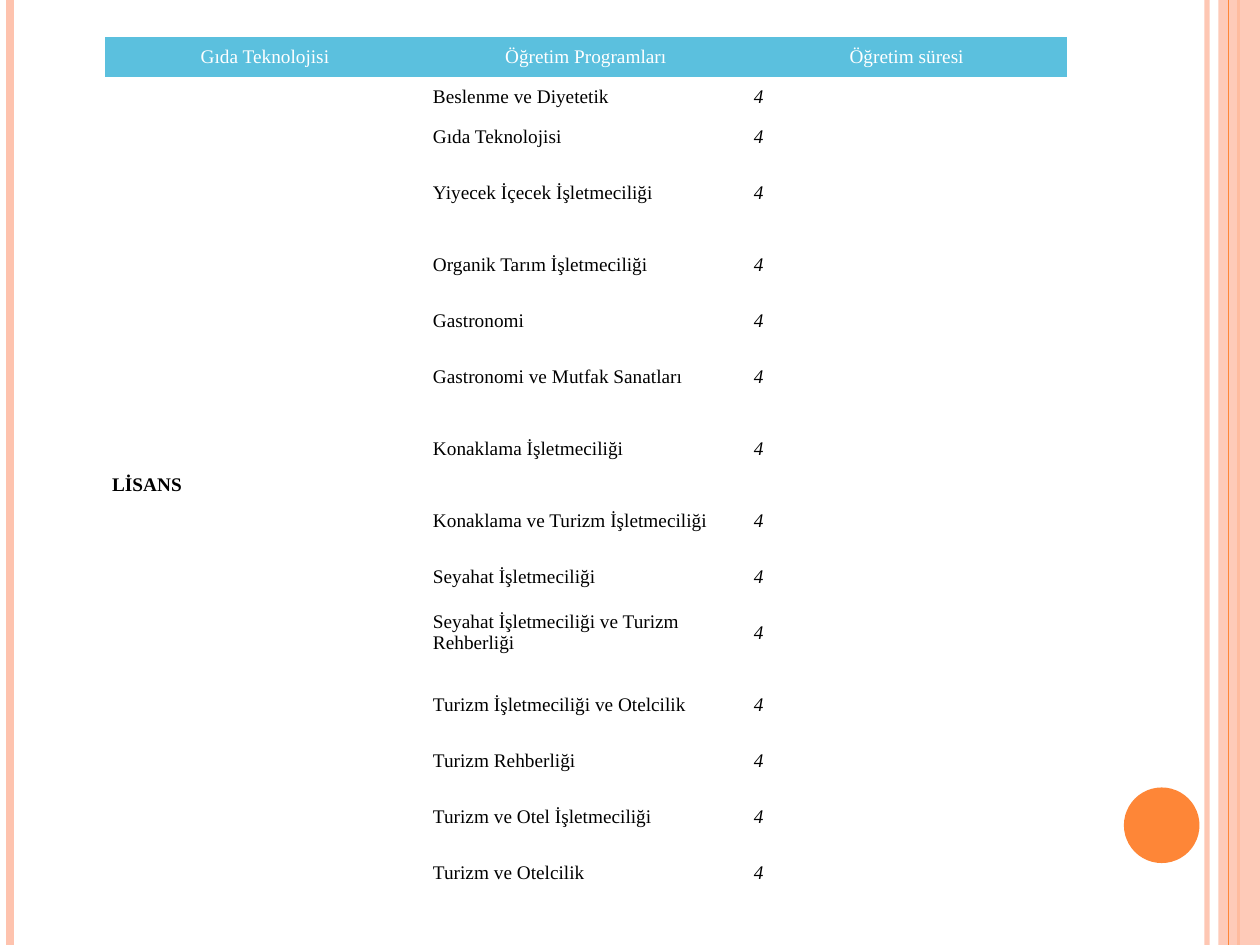
from lxml import etree
from pptx import Presentation
from pptx import util as u
from pptx.dml.color import RGBColor
from pptx.enum import shapes, text
from pptx.oxml.ns import qn

Inches = u.Inches
PEACH, ORANGE, BLUE = "FEC3AE", "FE8637", "5BC0DE"
WHITE, BLACK = "FFFFFF", "000000"
NO_GRID_STYLE = "{2D5ABB26-0587-4C30-8999-92F81FD0307C}"
SHORT, TALL = 0.32, 0.57
HEADERS = ["Gıda Teknolojisi", "Öğretim Programları", "Öğretim süresi"]
PROGRAMS = [
    ("Beslenme ve Diyetetik", SHORT),
    ("Gıda Teknolojisi", SHORT),
    ("Yiyecek İçecek İşletmeciliği", TALL),
    ("Organik Tarım İşletmeciliği", TALL),
    ("Gastronomi", SHORT),
    ("Gastronomi ve Mutfak Sanatları", TALL),
    ("Konaklama İşletmeciliği", TALL),
    ("Konaklama ve Turizm İşletmeciliği", TALL),
    ("Seyahat İşletmeciliği", SHORT),
    ("Seyahat İşletmeciliği ve Turizm Rehberliği", TALL),
    ("Turizm İşletmeciliği ve Otelcilik", TALL),
    ("Turizm Rehberliği", SHORT),
    ("Turizm ve Otel İşletmeciliği", TALL),
    ("Turizm ve Otelcilik", SHORT),
]


def paint(color_format, color):
    color_format.rgb = RGBColor.from_string(color)


def set_opacity(element, percent):
    color = element.find(".//" + qn("a:srgbClr"))
    etree.SubElement(color, qn("a:alpha"), val=str(percent * 1000))


def add_vertical_line(slide, x, color, width, opacity=100):
    line = slide.shapes.add_connector(
        shapes.MSO_CONNECTOR.STRAIGHT, Inches(x), 0, Inches(x), Inches(7.5))
    paint(line.line.color, color)
    line.line.width = u.Pt(width)
    properties = line.element.spPr
    if opacity < 100:
        set_opacity(properties, opacity)
    etree.SubElement(properties, qn("a:effectLst"))


def add_filled_shape(slide, kind, bounds, color, opacity=100):
    shape = slide.shapes.add_shape(kind, *map(Inches, bounds))
    shape.shadow.inherit = False
    shape.fill.solid()
    paint(shape.fill.fore_color, color)
    shape.line.fill.background()
    if opacity < 100:
        set_opacity(shape.element.spPr, opacity)


def fill_cell(cell, words, fill=WHITE, color=BLACK, align=text.PP_ALIGN.LEFT,
              bold=False, italic=False):
    cell.fill.solid()
    paint(cell.fill.fore_color, fill)
    cell.vertical_anchor = text.MSO_ANCHOR.MIDDLE
    cell.margin_left = cell.margin_right = Inches(0.06)
    cell.margin_top = cell.margin_bottom = Inches(0.03)
    paragraph = cell.text_frame.paragraphs[0]
    paragraph.alignment = align
    run = paragraph.add_run()
    run.text = words
    run.font.name = "Times New Roman"
    run.font.size = u.Pt(11)
    run.font.bold = bold
    run.font.italic = italic
    paint(run.font.color, color)


def add_program_table(slide):
    heights = [SHORT] + [height for _, height in PROGRAMS]
    frame = slide.shapes.add_table(
        len(heights), len(HEADERS), Inches(0.83), Inches(0.29),
        Inches(7.64), Inches(sum(heights)))
    table = frame.table
    table.first_row = table.horz_banding = False
    frame.element.find(".//" + qn("a:tableStyleId")).text = NO_GRID_STYLE
    for row, height in zip(table.rows, heights):
        row.height = Inches(height)
    for column, header in enumerate(HEADERS):
        fill_cell(table.cell(0, column), header, BLUE, WHITE, text.PP_ALIGN.CENTER)
    table.cell(1, 0).merge(table.cell(len(PROGRAMS), 0))
    fill_cell(table.cell(1, 0), "LİSANS", bold=True)
    for row, (program, _) in enumerate(PROGRAMS, 1):
        fill_cell(table.cell(row, 1), program)
        fill_cell(table.cell(row, 2), "4", italic=True)


def main():
    presentation = Presentation()
    presentation.slide_width, presentation.slide_height = Inches(10), Inches(7.5)
    slide = presentation.slides.add_slide(presentation.slide_layouts[6])
    add_vertical_line(slide, 9.58, PEACH, 3, opacity=93)
    add_vertical_line(slide, 0.08, PEACH, 4.5)
    add_vertical_line(slide, 9.83, ORANGE, 1.5)
    add_filled_shape(slide, shapes.MSO_SHAPE.RECTANGLE, (9.67, 0, 0.33, 7.5), PEACH, opacity=87)
    add_vertical_line(slide, 9.75, ORANGE, 0.75)
    add_filled_shape(slide, shapes.MSO_SHAPE.OVAL, (8.92, 6.25, 0.6, 0.6), ORANGE)
    add_program_table(slide)
    presentation.save("out.pptx")


if __name__ == "__main__":
    main()
